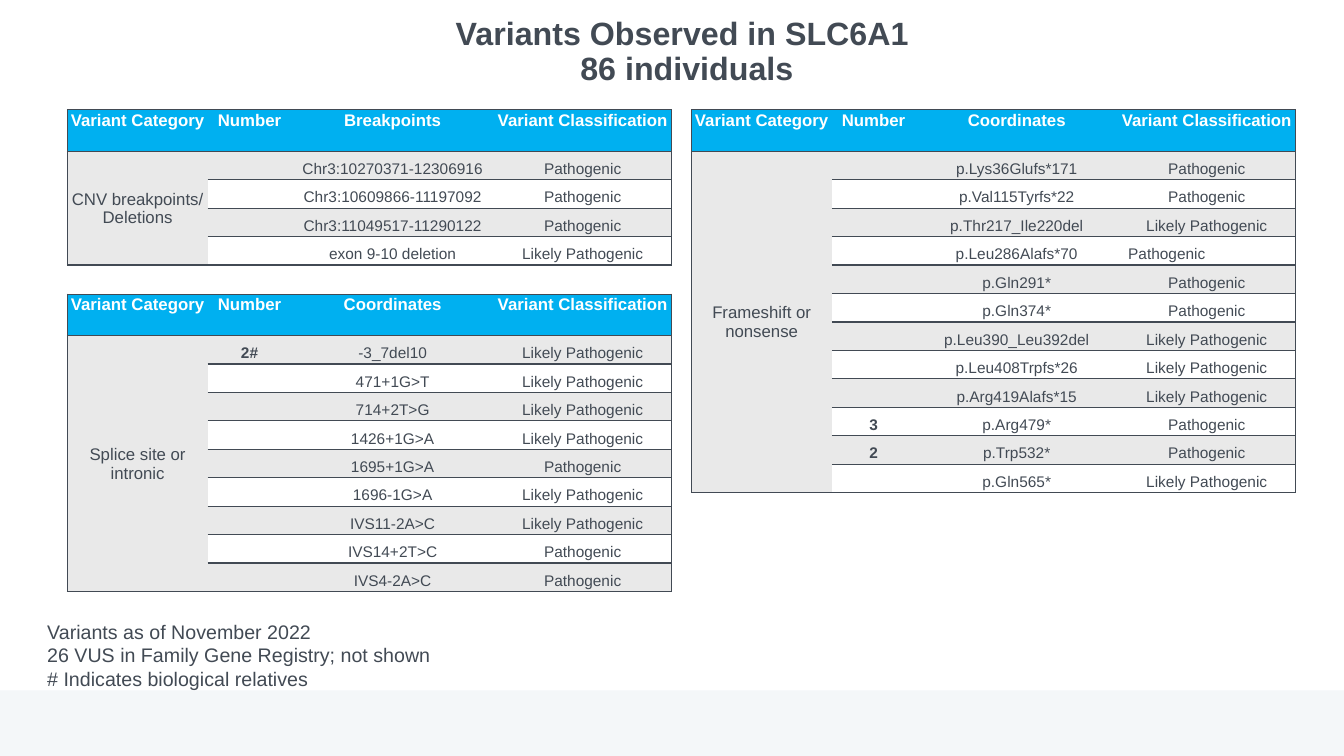
"""Build the slide of variants observed in SLC6A1."""
from dataclasses import dataclass
from lxml.etree import SubElement
from pptx import Presentation
from pptx.dml.color import RGBColor
from pptx.enum.shapes import MSO_SHAPE
from pptx.enum.text import MSO_ANCHOR, MSO_AUTO_SIZE, PP_ALIGN
from pptx.oxml.ns import qn
from pptx.util import Inches, Pt

PATH, LIKE = "Pathogenic", "Likely Pathogenic"
TITLE = "Variants Observed in SLC6A1\v 86 individuals"
NOTES = """Variants as of November 2022
26 VUS in Family Gene Registry; not shown
# Indicates biological relatives"""
SHIFTS = [
    ("", "p.Lys36Glufs*171", PATH),
    ("", "p.Val115Tyrfs*22", PATH),
    ("", "p.Thr217_Ile220del", LIKE),
    ("", "p.Leu286Alafs*70", PATH),
    ("", "p.Gln291*", PATH),
    ("", "p.Gln374*", PATH),
    ("", "p.Leu390_Leu392del", LIKE),
    ("", "p.Leu408Trpfs*26", LIKE),
    ("", "p.Arg419Alafs*15", LIKE),
    ("3", "p.Arg479*", PATH),
    ("2", "p.Trp532*", PATH),
    ("", "p.Gln565*", LIKE),
]
BREAKS = [
    ("", "Chr3:10270371-12306916", PATH),
    ("", "Chr3:10609866-11197092", PATH),
    ("", "Chr3:11049517-11290122", PATH),
    ("", "exon 9-10 deletion", LIKE),
]
SPLICES = [
    ("2#", "-3_7del10", LIKE),
    ("", "471+1G>T", LIKE),
    ("", "714+2T>G", LIKE),
    ("", "1426+1G>A", LIKE),
    ("", "1695+1G>A", PATH),
    ("", "1696-1G>A", LIKE),
    ("", "IVS11-2A>C", LIKE),
    ("", "IVS14+2T>C", PATH),
    ("", "IVS4-2A>C", PATH),
]
TABLES = [
    (6.86, 1.09, 3.8, "Coordinates", "Frameshift or nonsense", SHIFTS),
    (0.67, 1.09, 1.54, "Breakpoints", "CNV breakpoints/ Deletions", BREAKS),
    (0.67, 2.92, 2.95, "Coordinates", "Splice site or intronic", SPLICES),
]
LEFT = {"p.Leu286Alafs*70"}
COLS = (1.39, 0.83, 2.01, 1.76)
HEAD = 0.41


@dataclass(frozen=True)
class Theme:
    """Hold the colours, font and type sizes."""
    ink: str = "424A54"
    blue: str = "00B0F0"
    gray: str = "E9E9E9"
    white: str = "FFFFFF"
    band: str = "F4F7F9"
    font: str = "Arial"
    title: int = 23
    note: int = 14
    label: int = 12
    value: int = 11


LOOK = Theme()


def apply(item, values):
    """Set each named value on an object."""
    for name, value in values.items():
        setattr(item, name, value)


def paint(fill, color):
    """Make a fill solid."""
    fill.solid()
    fill.fore_color.rgb = RGBColor.from_string(color)


def style(frame, size, color=LOOK.ink, bold=False, **para):
    """Format every paragraph and run of a text frame."""
    for line in frame.paragraphs:
        apply(line, para)
        for run in line.runs:
            apply(run.font, {"name": LOOK.font, "size": Pt(size), "bold": bold})
            run.font.color.rgb = RGBColor.from_string(color)
        if not line.runs:
            line._p.get_or_add_endParaRPr().set("sz", str(size * 100))


def pad(item, left, top, right, base):
    """Set the four text margins."""
    names = ("margin_left", "margin_top", "margin_right", "margin_bottom")
    apply(item, dict(zip(names, map(Inches, (left, top, right, base)))))


def edge(cell, sides):
    """Rule the named sides of a cell and clear the others."""
    props = cell._tc.get_or_add_tcPr()
    for side in "LRTB":
        line = SubElement(props, qn(f"a:ln{side}"), w=str(Pt(1)))
        if side in sides:
            fill = SubElement(line, qn("a:solidFill"))
            SubElement(fill, qn("a:srgbClr"), val=LOOK.ink)
        else:
            SubElement(line, qn("a:noFill"))


def dress(cell, row, col, place):
    """Format one table cell by its row and column."""
    sides = "TB" + ("L" if col == 0 else "R" if col == 3 else "")
    edge(cell, sides)
    form = {"alignment": PP_ALIGN.CENTER}
    if row == 0:
        paint(cell.fill, LOOK.blue)
        pad(cell, 0.01, 0.01, 0.01, 0)
        style(cell.text_frame, LOOK.label, LOOK.white, True, **form)
    elif col == 0:
        paint(cell.fill, LOOK.gray)
        pad(cell, 0.01, 0.01, 0.01, 0)
        cell.vertical_anchor = MSO_ANCHOR.MIDDLE
        style(cell.text_frame, LOOK.label, **form)
    else:
        paint(cell.fill, LOOK.gray if row % 2 else LOOK.white)
        side = 0.03
        if col == 3 and place in LEFT:
            side, form = 0.1, {"alignment": PP_ALIGN.LEFT}
        pad(cell, side, 0.02, side, 0.02)
        cell.vertical_anchor = MSO_ANCHOR.BOTTOM
        style(cell.text_frame, LOOK.value, bold=col == 1, line_spacing=1.15, **form)


def chart(slide, left, top, high, place, group, data):
    """Add one variant table."""
    head = ("Variant Category", "Number", place, "Variant Classification")
    rows = [head] + [("", *item) for item in data]
    rows[1] = (group, *data[0])
    box = map(Inches, (left, top, sum(COLS), high))
    grid = slide.shapes.add_table(len(rows), len(COLS), *box).table
    apply(grid, {"first_row": False, "horz_banding": False})
    for col, wide in zip(grid.columns, COLS):
        col.width = Inches(wide)
    step = (high - HEAD) / len(data)
    for r, row in enumerate(rows):
        grid.rows[r].height = Inches(step if r else HEAD)
        for c, text in enumerate(row):
            cell = grid.cell(r, c)
            cell.text = text
            dress(cell, r, c, row[2])
    grid.cell(1, 0).merge(grid.cell(len(data), 0))


def main():
    """Compose and save the slide."""
    deck = Presentation()
    apply(deck, {"slide_width": Inches(13.33), "slide_height": Inches(7.5)})
    slide = deck.slides.add_slide(deck.slide_layouts[5])
    paint(slide.background.fill, LOOK.white)

    band = slide.shapes.add_shape(
        MSO_SHAPE.RECTANGLE, *map(Inches, (0, 6.85, 13.33, 0.65)))
    band.shadow.inherit = False
    paint(band.fill, LOOK.band)
    band.line.fill.background()

    title = slide.shapes.title
    apply(title, {"left": Inches(0.83), "top": Inches(0.18),
                  "width": Inches(11.88), "height": Inches(0.86)})
    frame = title.text_frame
    frame.text = TITLE
    apply(frame, {"word_wrap": True, "auto_size": MSO_AUTO_SIZE.NONE,
                  "vertical_anchor": MSO_ANCHOR.TOP})
    pad(frame, 0, 0, 0, 0)
    style(frame, LOOK.title, bold=True, alignment=PP_ALIGN.CENTER, line_spacing=0.9)

    notes = slide.shapes.add_textbox(*map(Inches, (0.37, 6.1, 4.17, 0.81)))
    frame = notes.text_frame
    frame.text = NOTES
    apply(frame, {"word_wrap": True, "auto_size": MSO_AUTO_SIZE.SHAPE_TO_FIT_TEXT})
    style(frame, LOOK.note)

    for item in TABLES:
        chart(slide, *item)
    deck.save("out.pptx")


if __name__ == "__main__":
    main()
